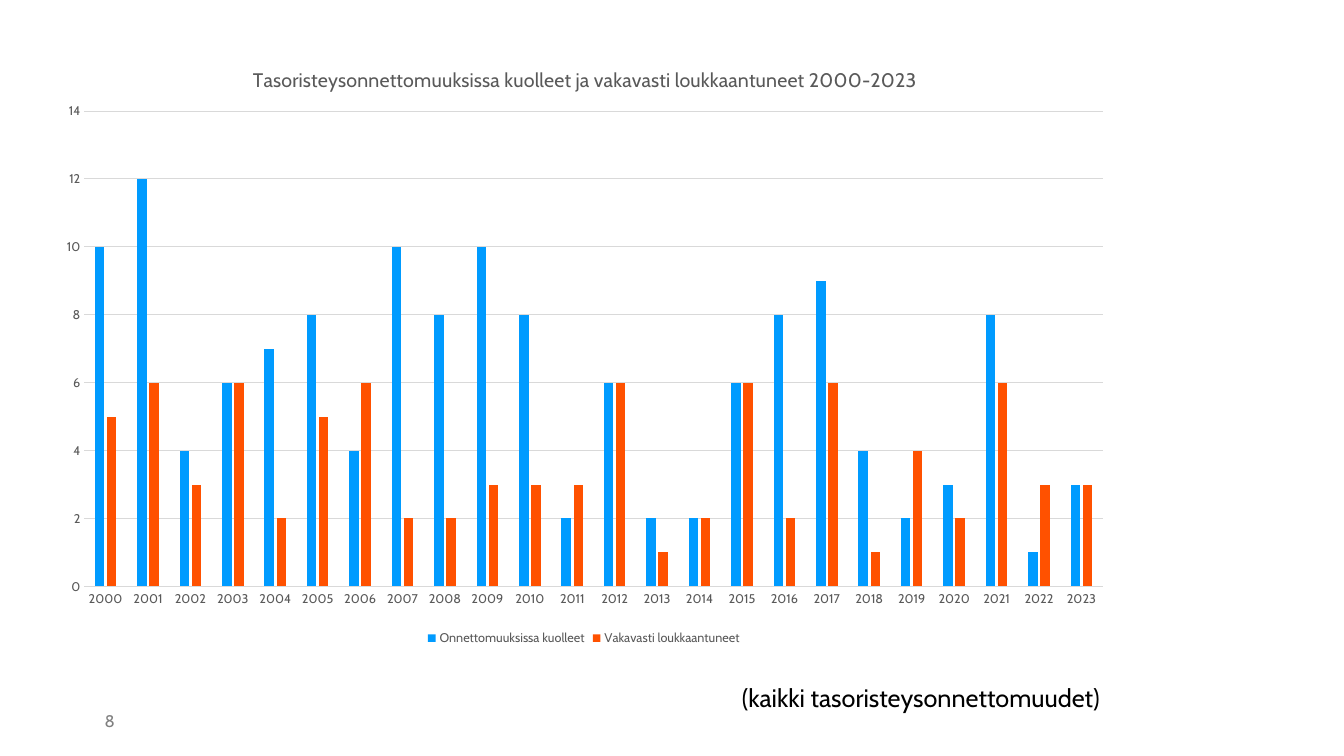
import pptx
import pptx.util
import pptx.chart.data
import pptx.dml.color
import pptx.enum.chart
import pptx.enum.text
import pptx.oxml

Inches = pptx.util.Inches
Pt = pptx.util.Pt
RGBColor = pptx.dml.color.RGBColor

BLACK = RGBColor(0x00, 0x00, 0x00)
TEXT_GREY = RGBColor(0x59, 0x59, 0x59)
NUMBER_GREY = RGBColor(0x80, 0x80, 0x80)
LINE_GREY = RGBColor(0xD9, 0xD9, 0xD9)
BLUE = RGBColor(0x00, 0x9B, 0xFF)
ORANGE = RGBColor(0xFF, 0x51, 0x00)
FONT = "Cabin"

TITLE = "Tasoristeysonnettomuuksissa kuolleet ja vakavasti loukkaantuneet 2000-2023"
YEARS = [str(year) for year in range(2000, 2024)]
SERIES = [
    ("Onnettomuuksissa kuolleet", BLUE,
     [10, 12, 4, 6, 7, 8, 4, 10, 8, 10, 8, 2, 6, 2, 2, 6, 8, 9, 4, 2, 3, 8, 1, 3]),
    ("Vakavasti loukkaantuneet", ORANGE,
     [5, 6, 3, 6, 2, 5, 6, 2, 2, 3, 3, 3, 6, 1, 2, 6, 2, 6, 1, 4, 2, 6, 3, 3]),
]


def set_font(font, size, color):
    font.name = FONT
    font.size = Pt(size)
    font.bold = False
    font.color.rgb = color


def set_layout(parent, index, **settings):
    for old in parent.findall(pptx.oxml.ns.qn("c:layout")):
        parent.remove(old)
    items = "".join(f'<c:{tag} val="{val}"/>' for tag, val in settings.items())
    layout = pptx.oxml.parse_xml(
        f'<c:layout {pptx.oxml.ns.nsdecls("c")}>'
        f"<c:manualLayout>{items}</c:manualLayout></c:layout>")
    parent.insert(index, layout)


def add_accident_chart(s, left, top, width, height):
    data = pptx.chart.data.CategoryChartData()
    data.categories = YEARS
    for name, color, values in SERIES:
        data.add_series(name, values)
    chart = s.shapes.add_chart(
        pptx.enum.chart.XL_CHART_TYPE.COLUMN_CLUSTERED,
        Inches(left), Inches(top), Inches(width), Inches(height), data).chart
    set_font(chart.font, 10, BLACK)

    title = chart.chart_title
    title.text_frame.text = TITLE
    set_font(title.text_frame.paragraphs[0].runs[0].font, 14, TEXT_GREY)
    title.include_in_layout = False
    set_layout(title._element, 1, xMode="edge", yMode="edge", x=0.19, y=0.04)
    set_layout(chart._chartSpace.chart.plotArea, 0, layoutTarget="inner",
               xMode="edge", yMode="edge", x=0.037, y=0.119, w=0.944, h=0.777)

    chart.has_legend = True
    legend = chart.legend
    legend.position = pptx.enum.chart.XL_LEGEND_POSITION.BOTTOM
    legend.include_in_layout = False
    set_font(legend.font, 9, TEXT_GREY)

    for axis in (chart.category_axis, chart.value_axis):
        axis.major_tick_mark = pptx.enum.chart.XL_TICK_MARK.NONE
        axis.minor_tick_mark = pptx.enum.chart.XL_TICK_MARK.NONE
        set_font(axis.tick_labels.font, 9, TEXT_GREY)
    chart.value_axis.minimum_scale = 0
    chart.value_axis.maximum_scale = 14
    chart.value_axis.major_unit = 2
    chart.value_axis.format.line.fill.background()
    for line in (chart.category_axis.format.line,
                 chart.value_axis.major_gridlines.format.line):
        line.color.rgb = LINE_GREY
        line.width = Pt(0.75)

    plot = chart.plots[0]
    plot.vary_by_categories = False
    plot.gap_width = 219
    plot.overlap = -27
    for series, (name, color, values) in zip(plot.series, SERIES):
        series.format.fill.solid()
        series.format.fill.fore_color.rgb = color


def add_text(s, left, top, width, height, text, size, color, wrap=True):
    tf = s.shapes.add_textbox(
        Inches(left), Inches(top), Inches(width), Inches(height)).text_frame
    tf.word_wrap = wrap
    tf.vertical_anchor = pptx.enum.text.MSO_ANCHOR.MIDDLE
    tf.text = text
    set_font(tf.paragraphs[0].runs[0].font, size, color)


def main():
    prs = pptx.Presentation()
    prs.slide_width = Inches(13.33)
    prs.slide_height = Inches(7.5)
    s = prs.slides.add_slide(prs.slide_layouts[6])
    add_text(s, 0.94, 6.95, 0.61, 0.4, "8", 12, NUMBER_GREY)
    add_text(s, 7.26, 6.72, 3.99, 0.4, "(kaikki tasoristeysonnettomuudet)",
             18, BLACK, wrap=False)
    add_accident_chart(s, 0.44, 0.38, 10.7, 6.07)
    prs.save("out.pptx")


if __name__ == "__main__":
    main()
